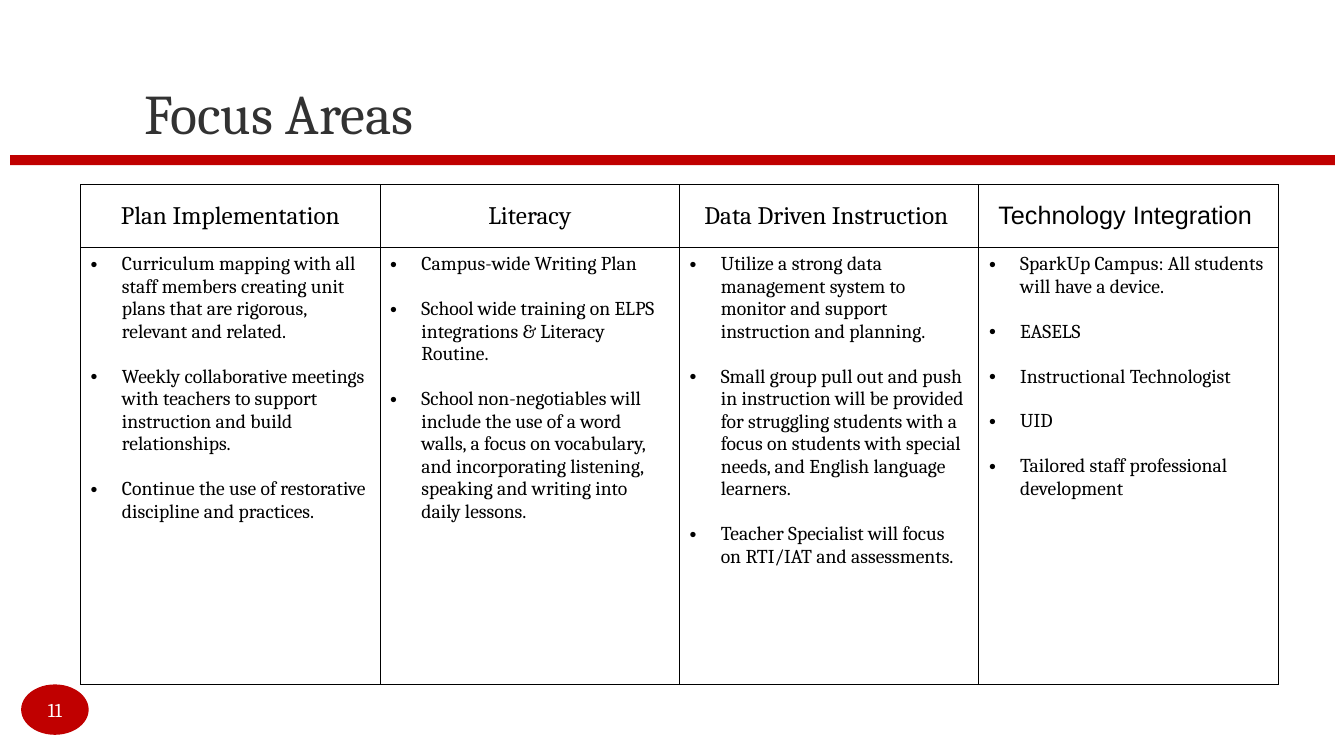
from dataclasses import dataclass

from lxml.etree import SubElement
from pptx import Presentation
from pptx.dml.color import RGBColor
from pptx.enum.shapes import MSO_SHAPE as Shape
from pptx.enum.text import MSO_ANCHOR as Anchor, PP_ALIGN as Align
from pptx.oxml.ns import qn
from pptx.util import Emu, Pt

SCALE = 9144  # one px is a hundredth of an inch
HUES = {"red": "C00000", "white": "FFFFFF", "grey": "323232", "black": "000000"}


@dataclass
class Area:
    head: str
    items: list[str]
    face: str = "Cambria"


AREAS = [
    Area("Plan Implementation", [
        "Curriculum mapping with all staff members creating unit plans that are "
        "rigorous, relevant and related.",
        "Weekly collaborative meetings with teachers to support instruction and "
        "build relationships.",
        "Continue the use of restorative discipline and practices.",
    ]),
    Area("Literacy", [
        "Campus-wide Writing Plan",
        "School wide training on ELPS integrations & Literacy Routine.",
        "School non-negotiables will include the use of a word walls, a focus on "
        "vocabulary, and incorporating listening, speaking and writing into daily "
        "lessons.",
    ]),
    Area("Data Driven Instruction ", [
        "Utilize a strong data management system to monitor and support "
        "instruction and planning.",
        "Small group pull out and push in instruction will be provided for "
        "struggling students with a focus on students with special needs, and "
        "English language learners.",
        "Teacher Specialist will focus on RTI/IAT and assessments.",
    ]),
    Area("Technology Integration ", [
        "SparkUp Campus: All students will have a device.",
        "EASELS",
        "Instructional Technologist",
        "UID",
        "Tailored staff professional development",
    ], "Arial"),
]


def px(num: int) -> Emu:
    return Emu(num * SCALE)


def box(*nums: int) -> list[Emu]:
    return [px(num) for num in nums]


def style(para, size: int, hue: str, face: str = "Cambria") -> None:
    for run in para.runs:
        run.font.size = Pt(size)
        run.font.name = face
        run.font.color.rgb = RGBColor.from_string(HUES[hue])


def pad(frame, left: int, top: int, right: int, foot: int) -> None:
    frame.margin_left, frame.margin_top = px(left), px(top)
    frame.margin_right, frame.margin_bottom = px(right), px(foot)


def draw(slide, kind: Shape, *place: int):
    """Add a plain red shape."""
    shape = slide.shapes.add_shape(kind, *box(*place))
    shape.shadow.inherit = False
    shape.fill.solid()
    shape.fill.fore_color.rgb = RGBColor.from_string(HUES["red"])
    shape.line.fill.background()
    return shape


def frame_cell(cell) -> None:
    """Give a cell thin black borders and no fill."""
    props = cell._tc.get_or_add_tcPr()
    for side in ("lnL", "lnR", "lnT", "lnB"):
        line = SubElement(props, qn(f"a:{side}"), w=str(Pt(0.75)))
        fill = SubElement(line, qn("a:solidFill"))
        SubElement(fill, qn("a:srgbClr"), val=HUES["black"])
    cell.fill.background()


def bullet(para) -> None:
    props = para._p.get_or_add_pPr()
    props.set("marL", str(px(31)))
    props.set("indent", str(px(-31)))
    hue = SubElement(props, qn("a:buClr"))
    SubElement(hue, qn("a:srgbClr"), val=HUES["black"])
    SubElement(props, qn("a:buFont"), typeface="Arial")
    SubElement(props, qn("a:buChar"), char="•")


def fill_head(cell, area: Area) -> None:
    cell.text_frame.text = area.head
    cell.vertical_anchor = Anchor.MIDDLE
    para = cell.text_frame.paragraphs[0]
    para.alignment = Align.CENTER
    style(para, 18, "black", area.face)


def fill_list(cell, area: Area) -> None:
    cell.text_frame.text = "\n".join(area.items)
    for rank, para in enumerate(cell.text_frame.paragraphs):
        bullet(para)
        if rank:
            para.space_before = Pt(16)
        style(para, 14, "black")


def add_title(slide) -> None:
    title = slide.shapes.title
    title.left, title.top, title.width, title.height = box(133, 30, 1133, 125)
    frame = title.text_frame
    frame.text = "Focus Areas"
    frame.vertical_anchor = Anchor.BOTTOM
    pad(frame, 10, 5, 10, 10)
    para = frame.paragraphs[0]
    para.alignment = Align.LEFT
    style(para, 40, "grey")


def add_badge(slide) -> None:
    """Draw the page number in its ellipse."""
    frame = draw(slide, Shape.OVAL, 21, 679, 67, 50).text_frame
    frame.text = "11"
    frame.vertical_anchor = Anchor.MIDDLE
    pad(frame, 0, 0, 0, 0)
    para = frame.paragraphs[0]
    para.alignment = Align.CENTER
    style(para, 14, "white")


def add_grid(slide) -> None:
    place = box(80, 183, 1187, 496)
    table = slide.shapes.add_table(2, len(AREAS), *place).table
    table.first_row = table.horz_banding = False
    for row, high in zip(table.rows, (63, 433)):
        row.height = px(high)
    for col, area in enumerate(AREAS):
        table.columns[col].width = px(297)
        fill_head(table.cell(0, col), area)
        fill_list(table.cell(1, col), area)
    for cell in table.iter_cells():
        frame_cell(cell)


def main() -> None:
    deck = Presentation()
    deck.slide_width, deck.slide_height = box(1333, 750)
    slide = deck.slides.add_slide(deck.slide_layouts[5])
    draw(slide, Shape.RECTANGLE, 10, 154, 1314, 10)
    add_badge(slide)
    add_title(slide)
    add_grid(slide)
    deck.save("out.pptx")


if __name__ == "__main__":
    main()
